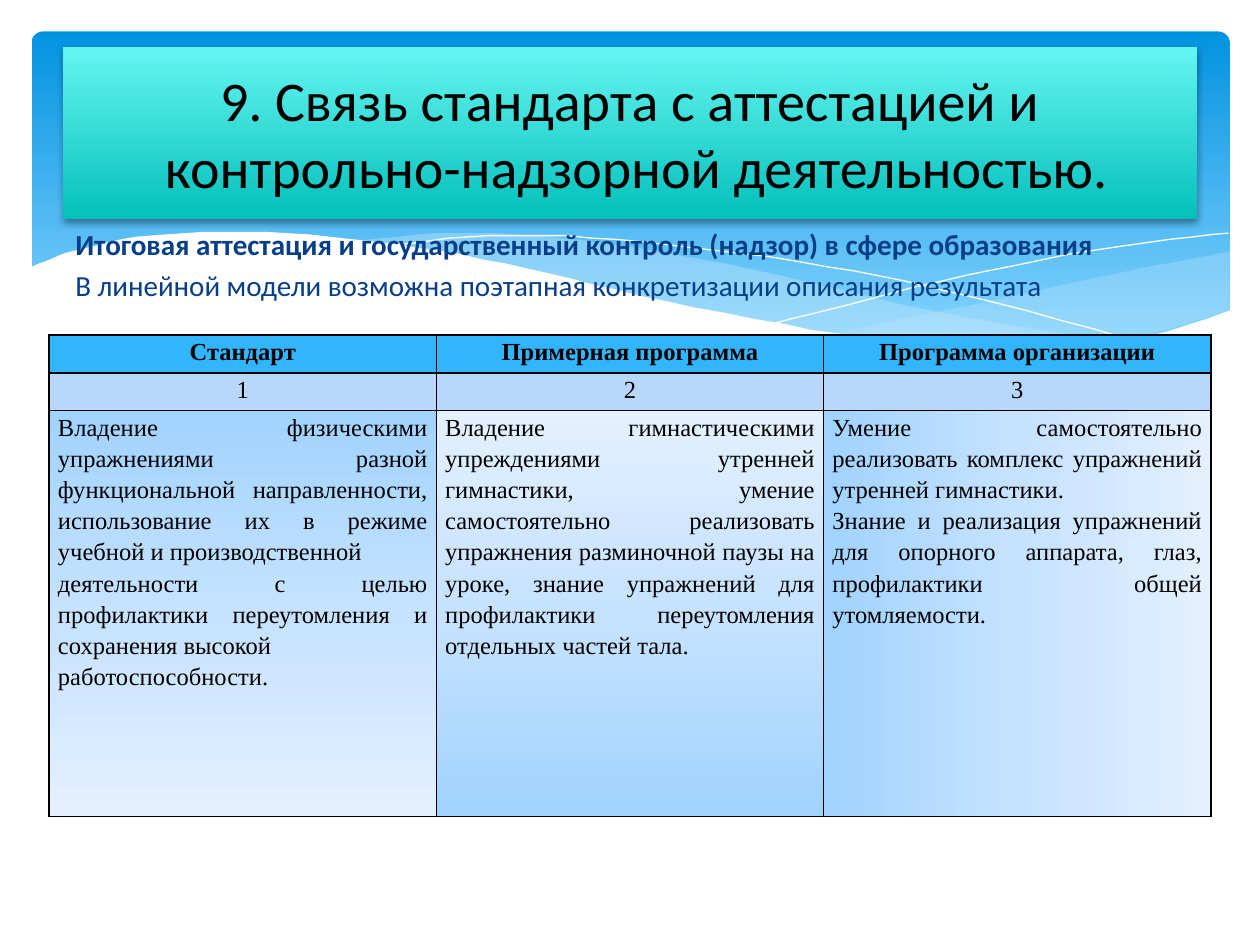
"""Build a slide on how a standard ties in with assessment and inspection."""
from lxml import etree
from pptx import Presentation
from pptx import util as u
from pptx.enum import shapes, text
from pptx.oxml import ns


def paint(props, hue, angle=90, alpha=100):
    if isinstance(hue, str):
        fill = etree.SubElement(props, ns.qn("a:solidFill"))
        tint = etree.SubElement(fill, ns.qn("a:srgbClr"), val=hue)
        if alpha < 100:
            etree.SubElement(tint, ns.qn("a:alpha"), val=str(alpha * 1000))
        return
    fill = etree.SubElement(props, ns.qn("a:gradFill"), rotWithShape="1")
    stops = etree.SubElement(fill, ns.qn("a:gsLst"))
    for share, tone in hue:
        stop = etree.SubElement(stops, ns.qn("a:gs"), pos=str(share * 1000))
        etree.SubElement(stop, ns.qn("a:srgbClr"), val=tone)
    etree.SubElement(fill, ns.qn("a:lin"), ang=str(angle * 60000), scaled="0")


def write(para, words, size, face, hue, bold=False):
    run = para.add_run()
    run.text = words
    paint(run._r.get_or_add_rPr(), hue)
    run.font.name, run.font.size, run.font.bold = face, u.Pt(size), bold


deck = Presentation()
deck.slide_width, deck.slide_height = u.Inches(10), u.Inches(7.5)
slide = deck.slides.add_slide(deck.slide_layouts[5])
items = slide.shapes

unit = deck.slide_width / 40
grid = {
    "back": (1, 1, 38.04, 10.8),
    "lead": (2, 7, 36, 3.32),
    "table": (1.56, 10.64, 36.88, 15.32),
    "title": (2, 1.48, 36, 5.48),
}
spots = {name: [round(n * unit) for n in cells] for name, cells in grid.items()}

back = items.add_shape(shapes.MSO_SHAPE.ROUNDED_RECTANGLE, *spots["back"])
back.adjustments[0] = 0.034
paint(back._element.spPr, [(0, "0293E0"), (90, "83D3FE"), (100, "83D3FE")])
back.line.fill.background()
back.shadow.inherit = False

waves = [
    ("C6E7FC", 29, True, [
        [(976, 200), (891, 216), (661, 265)],
        [(661, 265), (775, 276), (880, 272), (976, 247)]]),
    ("C6E7FC", 40, True, [
        [(893, 273), (741, 247), (598, 214), (465, 191), (361, 185), (286, 191)],
        [(286, 191), (404, 211), (566, 248), (709, 272), (796, 278), (893, 273)]]),
    ("FFFFFF", 100, False, [
        [(309, 195), (387, 187), (489, 190), (636, 208), (760, 233), (907, 272)]]),
    ("FFFFFF", 100, False, [[(613, 257), (748, 223), (866, 199), (975, 185)]]),
    ("FFFFFF", 100, True, [
        [(977, 246), (899, 269), (793, 276), (668, 265), (529, 239), (418, 213),
         (316, 194), (211, 184), (119, 187), (59, 199), (23, 213)],
        [(23, 329), (977, 329)]]),
]
steps = 6
for hue, alpha, closed, edges in waves:
    points = []
    for edge in edges:
        knots = [edge[0], *edge, edge[-1]]
        points.append(edge[0])
        for four in zip(knots, knots[1:], knots[2:], knots[3:]):
            for step in range(1, steps + 1):
                t = step / steps
                points.append(tuple(
                    b + t * (c - a + t * (2 * a - 5 * b + 4 * c - d
                                          + t * (3 * b - a - 3 * c + d))) / 2
                    for a, b, c, d in zip(*four)))
    pen = items.build_freeform(*points[0], scale=u.Inches(0.01))
    pen.add_line_segments(points[1:], close=closed)
    wave = pen.convert_to_shape()
    if closed:
        paint(wave._element.spPr, hue, alpha=alpha)
        wave.line.fill.background()
    else:
        wave.fill.background()
        wave.line.width = 0
        paint(wave._element.spPr.get_or_add_ln(), hue)
    wave.shadow.inherit = False

lead = items.add_textbox(*spots["lead"]).text_frame
lead.word_wrap = True
lines = [
    ("Итоговая аттестация и государственный контроль (надзор) в сфере образования", True),
    ("В линейной модели возможна поэтапная конкретизации описания результата", False),
]
for row, (words, bold) in enumerate(lines):
    para = lead.add_paragraph() if row else lead.paragraphs[0]
    para.space_before = u.Pt(3.3)
    write(para, words, 16.6, "Calibri", "073E87", bold)

blues = [(0, "A1D3FF"), (50, "C6E2FF"), (100, "E3F0FF")]
heads = ["Стандарт", "Примерная программа", "Программа организации"]
goals = [
    ["Владение физическими упражнениями разной функциональной направленности, "
     "использование их в режиме учебной и производственной",
     "деятельности с целью профилактики переутомления и сохранения высокой",
     "работоспособности."],
    ["Владение гимнастическими упреждениями утренней гимнастики, умение самостоятельно "
     "реализовать упражнения разминочной паузы на уроке, знание упражнений для "
     "профилактики переутомления отдельных частей тала."],
    ["Умение самостоятельно реализовать комплекс упражнений утренней гимнастики.",
     "Знание и реализация упражнений для опорного аппарата, глаз, профилактики общей "
     "утомляемости."],
]
rows = [
    (0.3, [[head] for head in heads], "31B6FD"),
    (0.3, [["1"], ["2"], ["3"]], "B9D6FB"),
    (3.22, goals, blues),
]
table = items.add_table(3, 3, *spots["table"]).table
table.first_row = table.horz_banding = False
for row, (height, cells, hue) in enumerate(rows):
    table.rows[row].height = u.Inches(height)
    for col, (paras, angle) in enumerate(zip(cells, (90, 270, 0))):
        cell = table.cell(row, col)
        cell.margin_left = cell.margin_right = u.Inches(0.07)
        cell.margin_top = cell.margin_bottom = 0
        props = cell._tc.get_or_add_tcPr()
        for side in "LRTB":
            edge = etree.SubElement(props, ns.qn("a:ln" + side), w=str(u.Pt(1)))
            paint(edge, "000000")
        paint(props, hue, angle)
        for step, words in enumerate(paras):
            para = cell.text_frame.add_paragraph() if step else cell.text_frame.paragraphs[0]
            para.alignment = text.PP_ALIGN.JUSTIFY if row == 2 else text.PP_ALIGN.CENTER
            para.line_spacing = 1.15
            write(para, words, 14, "Times New Roman", "000000", row == 0)

title = items.title
title.left, title.top, title.width, title.height = spots["title"]
props = title._element.spPr
paint(props, [(0, "65F5F1"), (100, "04C0BB")])
glow = etree.SubElement(props, ns.qn("a:effectLst"))
shade = etree.SubElement(glow, ns.qn("a:outerShdw"), blurRad=str(u.Pt(4)),
                         dist=str(u.Pt(2)), dir="5400000", rotWithShape="0")
tone = etree.SubElement(shade, ns.qn("a:srgbClr"), val="000000")
etree.SubElement(tone, ns.qn("a:alpha"), val="38000")
frame = title.text_frame
frame.word_wrap, frame.auto_size = True, text.MSO_AUTO_SIZE.NONE
frame.vertical_anchor = text.MSO_ANCHOR.MIDDLE
para = frame.paragraphs[0]
para.alignment = text.PP_ALIGN.CENTER
dents = para._p.get_or_add_pPr()
dents.set("marL", str(u.Inches(0.11)))
dents.set("indent", str(u.Inches(-0.56)))
write(para, "9. Связь стандарта с аттестацией и контрольно-надзорной деятельностью.",
      32, "Calibri", "000000")
items._spTree.append(title._element)

deck.save("out.pptx")
